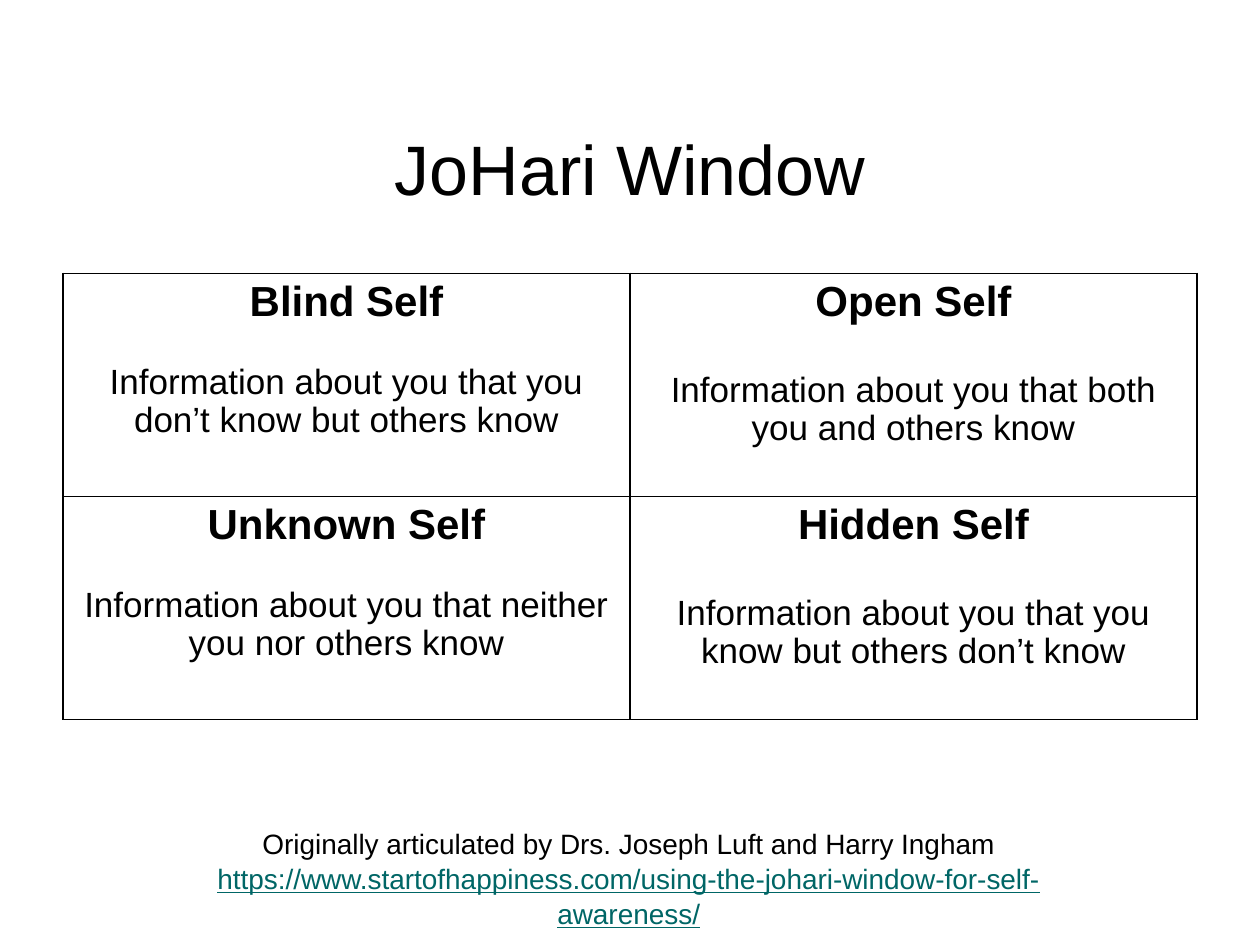
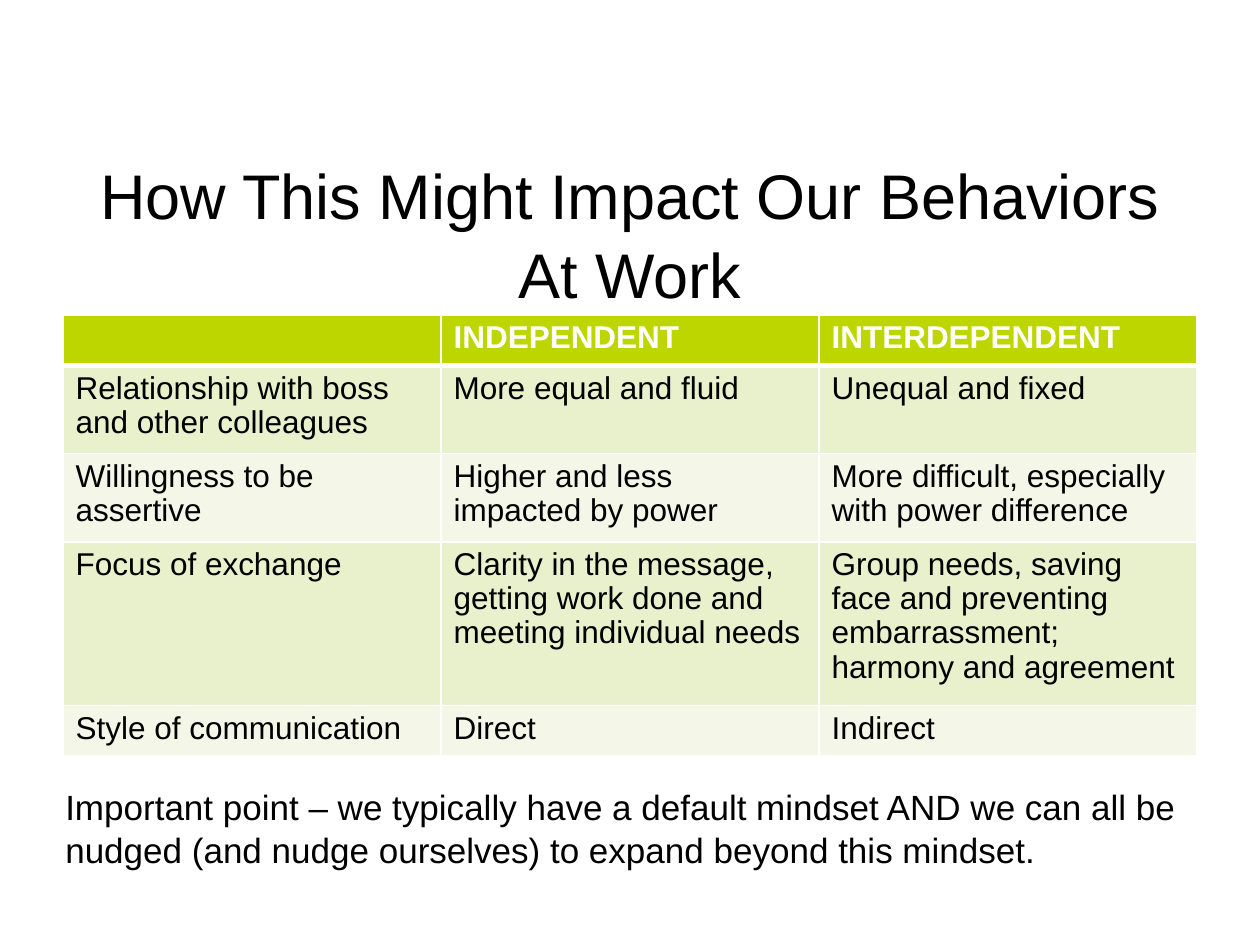
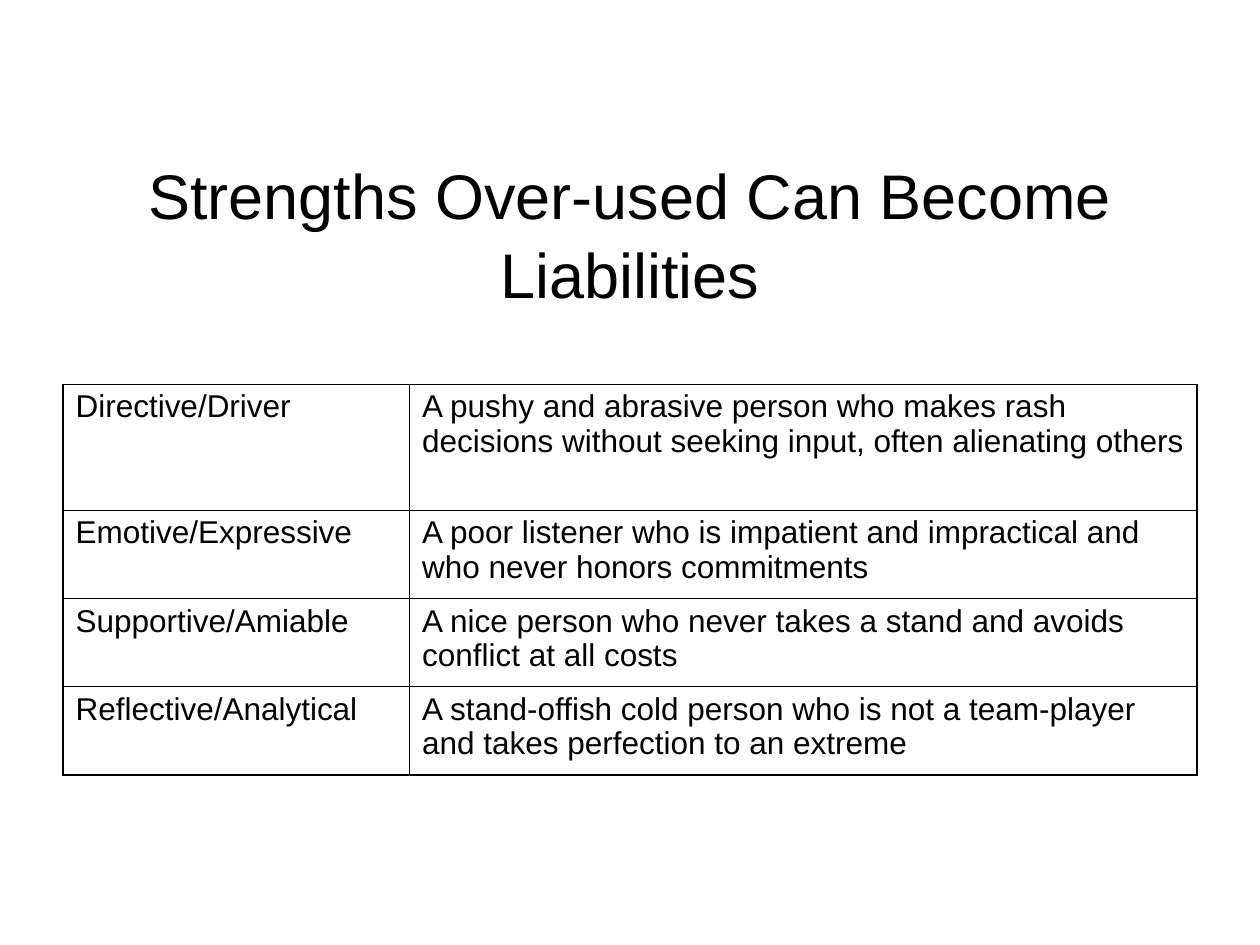
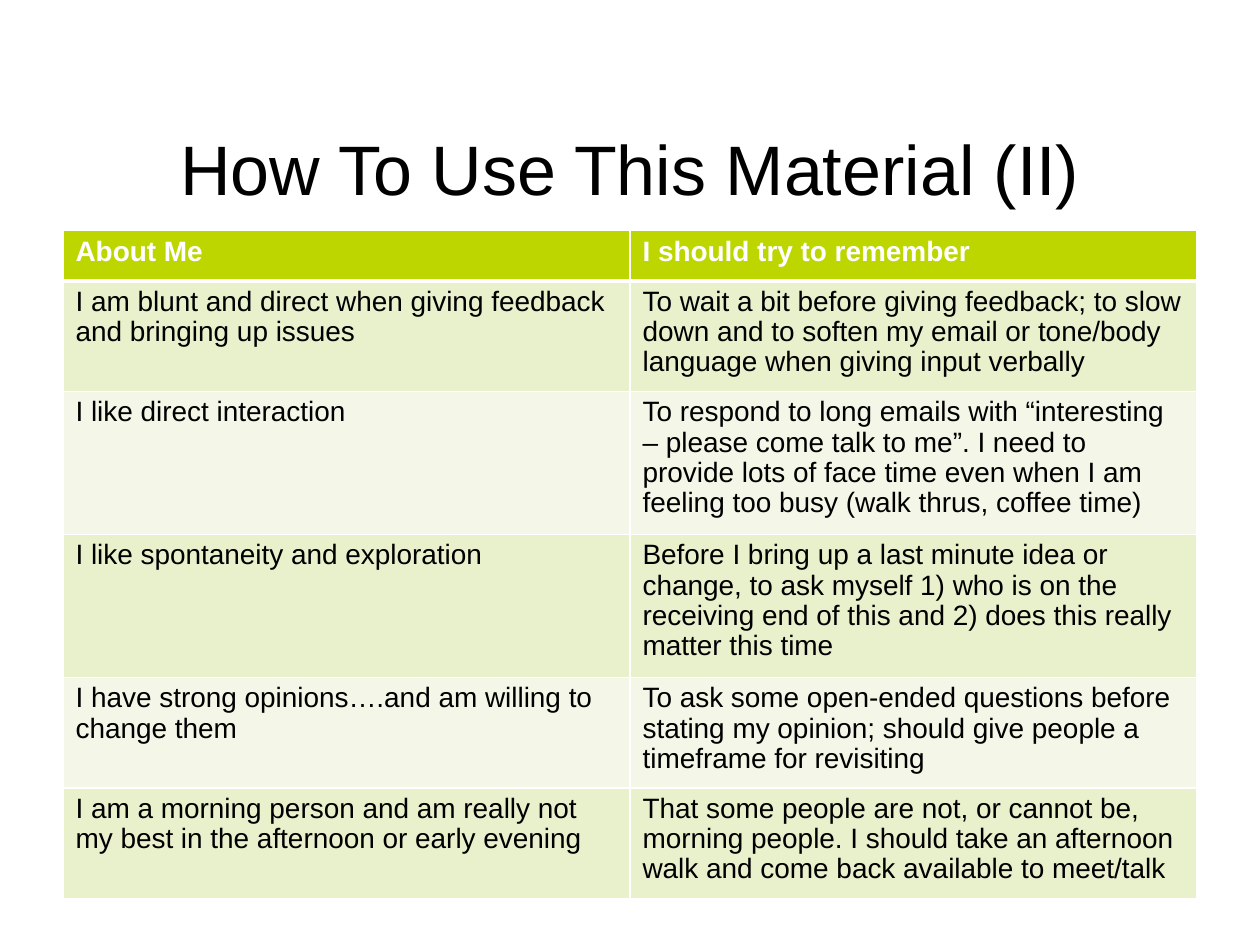
from lxml.etree import SubElement
from pptx import Presentation
from pptx.dml.color import RGBColor
from pptx.enum.text import MSO_ANCHOR, PP_ALIGN
from pptx.oxml.ns import qn
from pptx.util import Inches, Pt

BLACK = RGBColor(0x00, 0x00, 0x00)
WHITE = RGBColor(0xFF, 0xFF, 0xFF)
LIME = RGBColor(0xBE, 0xD6, 0x00)
BANDS = (RGBColor(0xE8, 0xF0, 0xCC), RGBColor(0xF4, 0xF7, 0xE7))
TEAL = RGBColor(0x00, 0x66, 0x66)
FONT = "Arial"
LEFT, WIDTH = 0.5, 9
BOX_SPACING, CELL_SPACING = 1.04, 0.97

WINDOW = [
    [("Blind Self", "Information about you that you don’t know but others know"),
     ("Open Self", "Information about you that both you and others know")],
    [("Unknown Self", "Information about you that neither you nor others know"),
     ("Hidden Self", "Information about you that you know but others don’t know")],
]
WINDOW_GAPS = (22.3, 26.8)
CREDIT = "Originally articulated by Drs. Joseph Luft and Harry Ingham "
CREDIT_URL = "https://www.startofhappiness.com/using-the-johari-window-for-self-awareness/"

MINDSETS = [
    ("", "INDEPENDENT", "INTERDEPENDENT"),
    ("Relationship with boss and other colleagues", "More equal and fluid",
     "Unequal and fixed"),
    ("Willingness to be assertive", "Higher and less impacted by power",
     "More difficult, especially with power difference"),
    ("Focus of exchange",
     "Clarity in the message, getting work done and meeting individual needs",
     "Group needs, saving face and preventing embarrassment; harmony and agreement"),
    ("Style of communication", "Direct", "Indirect"),
]
POINT = ("Important point – we typically have a default mindset AND we can all be "
         "nudged (and nudge ourselves) to expand beyond this mindset.")

LIABILITIES = [
    ("Directive/Driver", "A pushy and abrasive person who makes rash decisions "
     "without seeking input, often alienating others"),
    ("Emotive/Expressive", "A poor listener who is impatient and impractical and "
     "who never honors commitments"),
    ("Supportive/Amiable", "A nice person who never takes a stand and avoids "
     "conflict at all costs"),
    ("Reflective/Analytical", "A stand-offish cold person who is not a team-player "
     "and takes perfection to an extreme"),
]

REMINDERS = [
    ("About Me", "I should try to remember"),
    ("I am blunt and direct when giving feedback and bringing up issues",
     "To wait a bit before giving feedback; to slow down and to soften my email or "
     "tone/body language when giving input verbally"),
    ("I like direct interaction",
     "To respond to long emails with “interesting – please come talk to me”. I need "
     "to provide lots of face time even when I am feeling too busy (walk thrus, "
     "coffee time)"),
    ("I like spontaneity and exploration",
     "Before I bring up a last minute idea or change, to ask myself 1) who is on the "
     "receiving end of this and 2) does this really matter this time"),
    ("I have strong opinions….and am willing to change them",
     "To ask some open-ended questions before stating my opinion; should give people "
     "a timeframe for revisiting"),
    ("I am a morning person and am really not my best in the afternoon or early evening",
     "That some people are not, or cannot be, morning people. I should take an "
     "afternoon walk and come back available to meet/talk"),
]


def style(p, size, color=BLACK, bold=False, align=PP_ALIGN.LEFT, spacing=CELL_SPACING):
    p.alignment = align
    p.line_spacing = spacing
    for r in p.runs:
        r.font.name = FONT
        r.font.size = Pt(size)
        r.font.bold = bold
        r.font.color.rgb = color


def add_text(s, text, left, top, width, height, size, align=PP_ALIGN.CENTER):
    box = s.shapes.add_textbox(Inches(left), Inches(top), Inches(width), Inches(height))
    tf = box.text_frame
    tf.word_wrap = True
    tf.vertical_anchor = MSO_ANCHOR.TOP
    tf.text = text
    style(tf.paragraphs[0], size, align=align, spacing=BOX_SPACING)
    return tf.paragraphs[0]


def add_slide(prs, title, top, size):
    s = prs.slides.add_slide(prs.slide_layouts[6])
    add_text(s, title, LEFT, top, WIDTH, 1.08, size)
    return s


def set_borders(cell, color, top=1, bottom=1):
    tcPr = cell._tc.get_or_add_tcPr()
    for side, width in (("L", 1), ("R", 1), ("T", top), ("B", bottom)):
        ln = SubElement(tcPr, qn("a:ln" + side), w=str(Pt(width)))
        fill = SubElement(ln, qn("a:solidFill"))
        SubElement(fill, qn("a:srgbClr"), val=str(color))


def add_grid(s, top, cols, rows):
    frame = s.shapes.add_table(len(rows), len(cols), Inches(LEFT), Inches(top),
                               Inches(WIDTH), Inches(sum(rows)))
    table = frame.table
    table.first_row = table.horz_banding = False
    for col, width in zip(table.columns, cols):
        col.width = Inches(width)
    for row, height in zip(table.rows, rows):
        row.height = Inches(height)
    return table


def fill_cell(cell, color):
    cell.fill.solid()
    cell.fill.fore_color.rgb = color


def add_plain_table(s, content, top, cols, rows, size):
    table = add_grid(s, top, cols, rows)
    for i, texts in enumerate(content):
        for j, text in enumerate(texts):
            cell = table.cell(i, j)
            set_borders(cell, BLACK)
            fill_cell(cell, WHITE)
            cell.text_frame.text = text
            style(cell.text_frame.paragraphs[0], size)


def add_banded_table(s, content, top, cols, rows, size):
    table = add_grid(s, top, cols, rows)
    for i, texts in enumerate(content):
        header = i == 0
        for j, text in enumerate(texts):
            cell = table.cell(i, j)
            set_borders(cell, WHITE, top=3 if i == 1 else 1, bottom=3 if header else 1)
            fill_cell(cell, LIME if header else BANDS[(i - 1) % 2])
            cell.text_frame.text = text
            style(cell.text_frame.paragraphs[0], size, WHITE if header else BLACK, header)


def add_window(s, top, cols, rows):
    table = add_grid(s, top, cols, rows)
    for i, pairs in enumerate(WINDOW):
        for j, (name, meaning) in enumerate(pairs):
            cell = table.cell(i, j)
            set_borders(cell, BLACK)
            cell.fill.background()
            tf = cell.text_frame
            tf.text = name
            style(tf.paragraphs[0], 24, bold=True, align=PP_ALIGN.CENTER)
            p = tf.add_paragraph()
            p.text = meaning
            p.space_before = Pt(WINDOW_GAPS[j])
            style(p, 20, align=PP_ALIGN.CENTER)


def main():
    prs = Presentation()
    prs.slide_width, prs.slide_height = Inches(10), Inches(7.5)

    s = add_slide(prs, "JoHari Window", 0.92, 40)
    add_window(s, 2.17, [4.5] * 2, [1.77] * 2)
    p = add_text(s, CREDIT, 1.53, 6.5, 6.92, 0.91, 16)
    r = p.add_run()
    r.text = CREDIT_URL
    style(p, 16, align=PP_ALIGN.CENTER, spacing=BOX_SPACING)
    r.font.color.rgb = TEAL
    r.font.underline = True

    s = add_slide(prs, "How This Might Impact Our Behaviors At Work", 1.17, 36)
    add_banded_table(s, MINDSETS, 2.5, [3] * 3, [0.4, 0.7, 0.7, 1.3, 0.4], 18)
    add_text(s, POINT, 0.42, 6.17, 9.33, 0.77, 20, PP_ALIGN.LEFT)

    s = add_slide(prs, "Strengths Over-used Can Become Liabilities", 1.17, 36)
    add_plain_table(s, LIABILITIES, 3.05, [2.75, 6.25], [1, 0.7, 0.7, 0.7], 18)

    s = add_slide(prs, "How To Use This Material (II)", 0.92, 40)
    add_banded_table(s, REMINDERS, 1.83, [4.5] * 2,
                     [0.4, 0.84, 1.09, 1.09, 0.84, 0.84], 16)

    prs.save("out.pptx")


if __name__ == "__main__":
    main()
